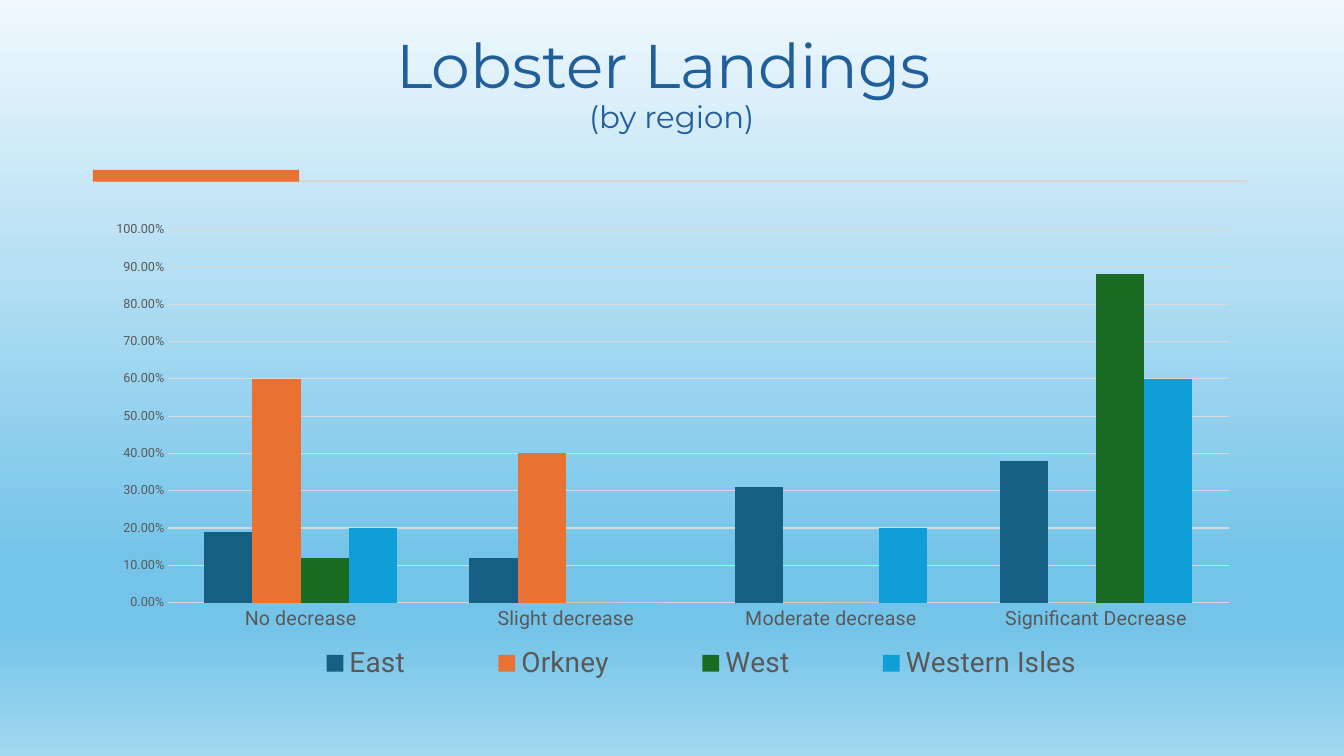
from lxml import etree
from pptx import Presentation
from pptx.chart.data import CategoryChartData
from pptx.dml.color import RGBColor
from pptx.enum.chart import XL_CHART_TYPE, XL_LEGEND_POSITION, XL_TICK_MARK
from pptx.enum.shapes import MSO_SHAPE
from pptx.enum.text import MSO_ANCHOR, MSO_AUTO_SIZE, PP_ALIGN
from pptx.oxml.ns import qn
from pptx.util import Cm, Pt

CLUSTERED = XL_CHART_TYPE.COLUMN_CLUSTERED
LEGEND_BOTTOM = XL_LEGEND_POSITION.BOTTOM
NO_TICK = XL_TICK_MARK.NONE
RECTANGLE = MSO_SHAPE.RECTANGLE
BOTTOM = MSO_ANCHOR.BOTTOM
NO_AUTOFIT = MSO_AUTO_SIZE.NONE
CENTER = PP_ALIGN.CENTER

BLUE = RGBColor(0x21, 0x5F, 0x9A)
ORANGE = RGBColor(0xE9, 0x71, 0x32)
RULE_GRAY = RGBColor(0xD5, 0xD5, 0xD5)
GRID_GRAY = RGBColor(0xD9, 0xD9, 0xD9)
LABEL_GRAY = RGBColor(0x59, 0x59, 0x59)
TEAL = RGBColor(0x15, 0x60, 0x82)
GREEN = RGBColor(0x19, 0x6B, 0x24)
SKY = RGBColor(0x0F, 0x9E, 0xD5)
SKY_STOPS = [
    (0, RGBColor(0xF0, 0xF8, 0xFD)),
    (74, RGBColor(0x74, 0xC4, 0xE9)),
    (83, RGBColor(0x74, 0xC4, 0xE9)),
    (100, RGBColor(0xA2, 0xD8, 0xF0)),
]

HEADING = [("Lobster Landings ", 44), ("(by region)", 22)]
RULES = [
    (2.41, 4.54, 29.03, 0.05, RULE_GRAY),
    (2.34, 4.28, 5.2, 0.3, ORANGE),
]
DECREASES = ["No decrease", "Slight decrease", "Moderate decrease", "Significant Decrease"]
REGIONS = [
    ("East", (0.19, 0.12, 0.31, 0.38), TEAL),
    ("Orkney", (0.6, 0.4, 0, 0), ORANGE),
    ("West", (0.12, 0, 0, 0.88), GREEN),
    ("Western Isles", (0.2, 0, 0.2, 0.6), SKY),
]
PLOT_PERCENT = {"x": 6.5, "y": 3.5, "w": 91.5, "h": 77.6}
LEGEND_PERCENT = {"x": 12.9, "y": 89.2, "w": 79.2, "h": 9}


def style_font(font, size, color, name="Roboto"):
    font.name = name
    font.size = Pt(size)
    font.color.rgb = color


def paint_background(slide):
    fill = slide.background.fill
    fill.gradient()
    fill.gradient_angle = 270
    stops = slide.background._cSld.find(".//" + qn("a:gsLst"))
    for stop in list(stops):
        stops.remove(stop)
    for percent, color in SKY_STOPS:
        stop = etree.SubElement(stops, qn("a:gs"), pos=str(percent * 1000))
        etree.SubElement(stop, qn("a:srgbClr"), val=str(color))


def place(parent, area, inner=False):
    layout = parent.find(qn("c:layout"))
    if layout is None:
        layout = etree.Element(qn("c:layout"))
        position = parent.find(qn("c:legendPos"))
        if position is None:
            parent.insert(0, layout)
        else:
            position.addnext(layout)
    manual = etree.SubElement(layout, qn("c:manualLayout"))
    if inner:
        etree.SubElement(manual, qn("c:layoutTarget"), val="inner")
    for side in "xy":
        etree.SubElement(manual, qn(f"c:{side}Mode"), val="edge")
    for side, percent in area.items():
        etree.SubElement(manual, qn(f"c:{side}"), val=f"{percent / 100:.3f}")


def add_heading(slide):
    title = slide.shapes.title
    title.left, title.top, title.width, title.height = Cm(2.34), Cm(0.71), Cm(29.18), Cm(2.82)
    frame = title.text_frame
    frame.auto_size = NO_AUTOFIT
    frame.vertical_anchor = BOTTOM
    line = frame.paragraphs[0]
    line.alignment = CENTER
    line.line_spacing = 0.9
    for index, (words, size) in enumerate(HEADING):
        if index:
            line.add_line_break()
        run = line.add_run()
        run.text = words
        style_font(run.font, size, BLUE, "Montserrat")


def add_rules(slide):
    for left, top, width, height, color in RULES:
        rule = slide.shapes.add_shape(RECTANGLE, Cm(left), Cm(top), Cm(width), Cm(height))
        rule.shadow.inherit = False
        rule.fill.solid()
        rule.fill.fore_color.rgb = color
        rule.line.fill.background()


def add_landings(slide):
    landings = CategoryChartData(number_format="0.00%")
    landings.categories = DECREASES
    for region, shares, _ in REGIONS:
        landings.add_series(region, shares)
    chart = slide.shapes.add_chart(
        CLUSTERED, Cm(2.34), Cm(5.36), Cm(29.21), Cm(12.12), landings
    ).chart
    chart.has_title = False
    chart.font.name = "Roboto"
    chart.font.size = Pt(10)

    columns = chart.plots[0]
    columns.gap_width = 150
    columns.overlap = 0
    columns.vary_by_categories = False
    for series, (_, _, color) in zip(columns.series, REGIONS):
        series.format.fill.solid()
        series.format.fill.fore_color.rgb = color

    for axis, size in ((chart.category_axis, 14), (chart.value_axis, 9)):
        axis.major_tick_mark = axis.minor_tick_mark = NO_TICK
        axis.format.line.fill.background()
        style_font(axis.tick_labels.font, size, LABEL_GRAY)

    share_axis = chart.value_axis
    share_axis.minimum_scale, share_axis.maximum_scale, share_axis.major_unit = 0, 1, 0.1
    share_axis.tick_labels.number_format = "0.00%"
    share_axis.tick_labels.number_format_is_linked = False
    share_axis.has_major_gridlines = True
    grid = share_axis.major_gridlines.format.line
    grid.color.rgb = GRID_GRAY
    grid.width = Pt(0.75)

    chart.has_legend = True
    legend = chart.legend
    legend.position = LEGEND_BOTTOM
    legend.include_in_layout = False
    style_font(legend.font, 20, LABEL_GRAY)
    place(legend._element, LEGEND_PERCENT)
    place(chart._chartSpace.find(".//" + qn("c:plotArea")), PLOT_PERCENT, inner=True)


def main():
    deck = Presentation()
    deck.slide_width, deck.slide_height = Cm(33.87), Cm(19.05)
    slide = deck.slides.add_slide(deck.slide_layouts[5])
    paint_background(slide)
    add_heading(slide)
    add_rules(slide)
    add_landings(slide)
    deck.save("out.pptx")


if __name__ == "__main__":
    main()
